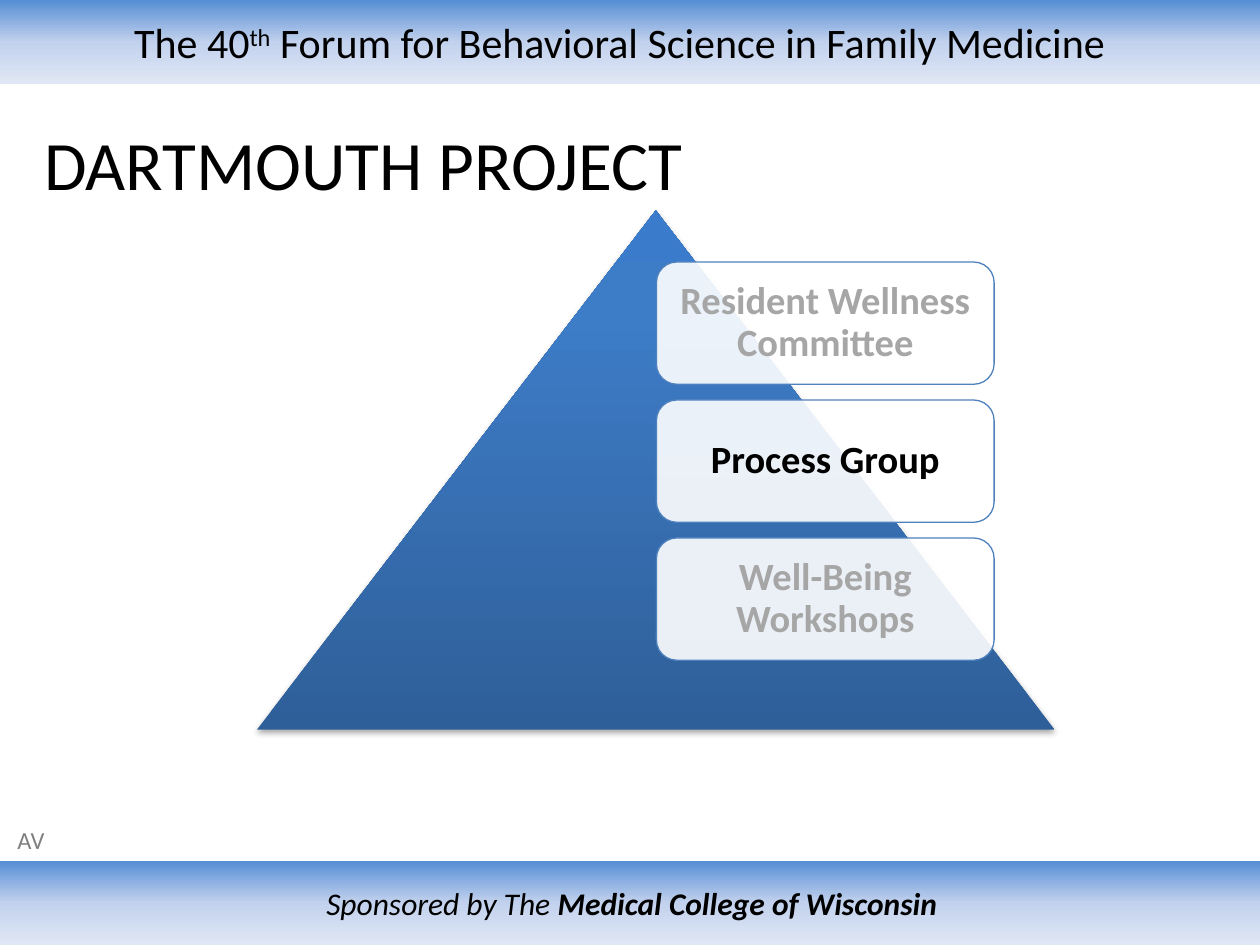
from lxml import etree
from pptx import Presentation
from pptx.dml.color import RGBColor
from pptx.enum import shapes, text
from pptx.oxml.ns import qn
from pptx.util import Inches, Pt

COLORS = {"black": "000000", "white": "FFFFFF", "muted": "A6A6A6",
          "grey": "808080", "outline": "4F81BD"}
BAND_STOPS = [(0, "558ED5"), (50, "C2D1ED"), (100, "E1E8F5")]
PYRAMID_STOPS = [(0, "2F5F99"), (80, "3D7CC7"), (100, "3A7CCB")]

TITLE = "DARTMOUTH PROJECT"
INITIALS = "AV"
HEADER = [("The 40", {}), ("th", {"superscript": True}),
          (" Forum for Behavioral Science in Family Medicine", {})]
FOOTER = [("Sponsored by The ", {"italic": True}),
          ("Medical College of Wisconsin", {"italic": True, "bold": True})]
STEPS = [("Resident Wellness Committee", "muted"),
         ("Process Group", "black"),
         ("Well-Being Workshops", "muted")]
STEP_LEFT, STEP_TOP, STEP_W, STEP_H, STEP_PITCH = 5.21, 2.08, 2.68, 0.97, 1.095


def write(sp, runs, size, color="black", align=text.PP_ALIGN.CENTER,
          anchor=text.MSO_ANCHOR.MIDDLE, spacing=None, bold=None):
    """Fill a shape with one paragraph of (text, format) runs."""
    tf = sp.text_frame
    tf.word_wrap = True
    tf.vertical_anchor = anchor
    p = tf.paragraphs[0]
    p.alignment = align
    p.line_spacing = spacing
    for words, fmt in runs:
        r = p.add_run()
        r.text = words
        r.font.name = "Calibri"
        r.font.size = Pt(size)
        r.font.color.rgb = RGBColor.from_string(COLORS[color])
        r.font.bold = fmt.get("bold", bold)
        r.font.italic = fmt.get("italic")
        if fmt.get("superscript"):
            r._r.get_or_add_rPr().set("baseline", "30000")
    return tf


def add_shape(s, kind, left, top, width, height):
    sp = s.shapes.add_shape(kind, Inches(left), Inches(top),
                            Inches(width), Inches(height))
    sp.shadow.inherit = False
    return sp


def fill_gradient(sp, stops, angle):
    """Apply the stops with a counter-clockwise angle and no outline."""
    sp.line.fill.background()
    sp.fill.gradient()
    sp.fill.gradient_angle = angle
    stop_list = sp._element.spPr.find(qn("a:gradFill")).find(qn("a:gsLst"))
    stop_list.clear()
    for position, color in stops:
        gs = etree.SubElement(stop_list, qn("a:gs"), pos=str(position * 1000))
        etree.SubElement(gs, qn("a:srgbClr"), val=color)


def add_band(s, top, width, runs, size):
    band = add_shape(s, shapes.MSO_SHAPE.RECTANGLE, 0, top, width, 0.67)
    fill_gradient(band, BAND_STOPS, 270)
    return write(band, runs, size)


def add_pyramid(s):
    sp = add_shape(s, shapes.MSO_SHAPE.ISOSCELES_TRIANGLE, 2.04, 1.67, 6.33, 4.12)
    fill_gradient(sp, PYRAMID_STOPS, 90)
    effects = sp._element.spPr.find(qn("a:effectLst"))
    shadow = etree.SubElement(effects, qn("a:outerShdw"), blurRad="40000",
                              dist="23000", dir="5400000", rotWithShape="0")
    color = etree.SubElement(shadow, qn("a:srgbClr"), val=COLORS["black"])
    etree.SubElement(color, qn("a:alpha"), val="35000")


def add_step(s, index, words, color):
    sp = add_shape(s, shapes.MSO_SHAPE.ROUNDED_RECTANGLE, STEP_LEFT,
                   STEP_TOP + index * STEP_PITCH, STEP_W, STEP_H)
    sp.fill.solid()
    sp.fill.fore_color.rgb = RGBColor.from_string(COLORS["white"])
    white = sp._element.spPr.find(qn("a:solidFill")).find(qn("a:srgbClr"))
    etree.SubElement(white, qn("a:alpha"), val="90000")
    sp.line.color.rgb = RGBColor.from_string(COLORS["outline"])
    sp.line.width = Pt(0.75)
    tf = write(sp, [(words, {})], 22, color, spacing=0.9, bold=True)
    tf.margin_left = tf.margin_right = Inches(0.09)
    tf.margin_top = tf.margin_bottom = Inches(0.09)


def main():
    prs = Presentation()
    prs.slide_width, prs.slide_height = Inches(10), Inches(7.5)
    s = prs.slides.add_slide(prs.slide_layouts[5])

    title = s.shapes.title
    title.left, title.top = Inches(0.25), Inches(0.92)
    title.width, title.height = Inches(9), Inches(0.75)
    tf = write(title, [(TITLE, {})], 39.6, align=text.PP_ALIGN.LEFT)
    tf.auto_size = text.MSO_AUTO_SIZE.NONE

    header = add_band(s, 0, 10, HEADER, 24)
    header.margin_right = Inches(0.26)
    add_band(s, 6.83, 10.03, FOOTER, 18)

    add_pyramid(s)
    for index, (words, color) in enumerate(STEPS):
        add_step(s, index, words, color)

    box = s.shapes.add_textbox(Inches(0.04), Inches(6.5), Inches(0.54), Inches(0.34))
    write(box, [(INITIALS, {})], 14, "grey", text.PP_ALIGN.LEFT, text.MSO_ANCHOR.TOP)

    prs.save("out.pptx")


if __name__ == "__main__":
    main()
